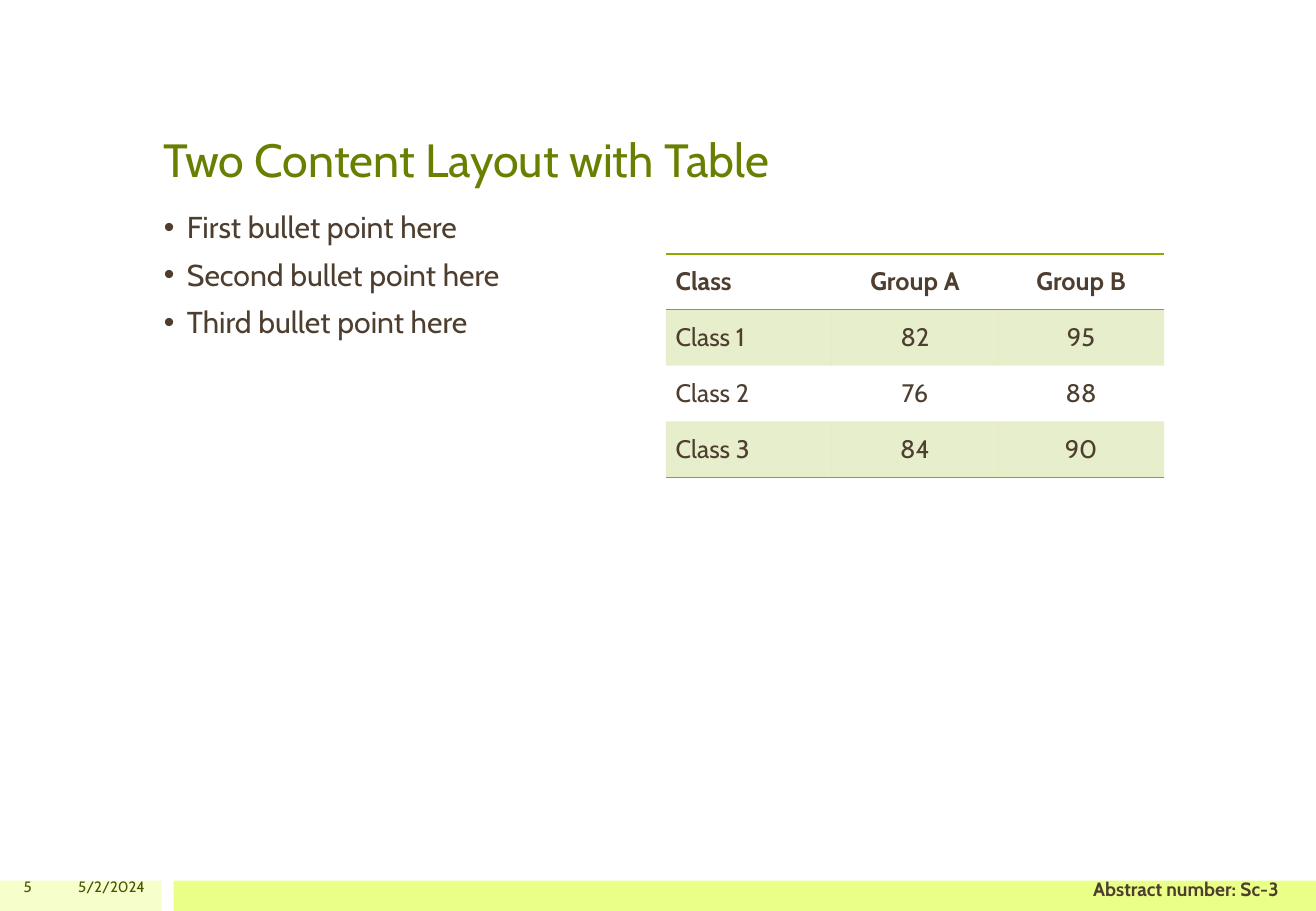
from lxml.etree import SubElement
from pptx import Presentation
from pptx.dml.color import RGBColor
from pptx.enum.shapes import MSO_SHAPE
from pptx.enum.text import MSO_ANCHOR, PP_ALIGN
from pptx.oxml.ns import qn
from pptx.util import Inches, Pt

# Content
TITLE = "Two Content Layout with Table"
BULLETS = ["First bullet point here", "Second bullet point here", "Third bullet point here"]
SCORES = [
    ("Class", "Group A", "Group B"),
    ("Class 1", "82", "95"),
    ("Class 2", "76", "88"),
    ("Class 3", "84", "90"),
]
PAGE_NUMBER = "5"
DATE = "5/2/2024"
ABSTRACT = "Abstract number: Sc-3"

# Style
FONT = "Cabin"
GREEN = RGBColor(0x68, 0x80, 0x00)
DARK_GREEN = RGBColor(0x45, 0x55, 0x00)
BROWN = RGBColor(0x4D, 0x3E, 0x2F)
RULE_GREEN = RGBColor(0x8B, 0xAA, 0x00)
PALE_LIME = RGBColor(0xF6, 0xFF, 0xCC)
LIME = RGBColor(0xE9, 0xFF, 0x88)
PLAIN_TABLE_STYLE = "{2D5ABB26-0587-4C30-8999-92F81FD0307C}"

# Layout in inches
WIDTH, HEIGHT = 10.83, 7.5
MARGIN = 1.25
COLUMN_WIDTH = 4.1
TABLE_TOP, ROW_HEIGHT = 2.09, 0.46
BAR_HEIGHT = 0.25
BARS = [(0, 1.33, PALE_LIME), (1.43, 9.4, LIME)]


def style_text(paragraph, size, color, bold=False, align=PP_ALIGN.LEFT):
    paragraph.alignment = align
    for run in paragraph.runs:
        run.font.name = FONT
        run.font.size = Pt(size)
        run.font.bold = bold
        run.font.color.rgb = color


def add_text(slide, lines, box, size, color, anchor=MSO_ANCHOR.TOP, **style):
    frame = slide.shapes.add_textbox(*map(Inches, box)).text_frame
    frame.word_wrap = True
    frame.vertical_anchor = anchor
    frame.text = "\n".join(lines)
    for paragraph in frame.paragraphs:
        style_text(paragraph, size, color, **style)
    return frame


def add_bullet(paragraph):
    paragraph.line_spacing = 0.9
    paragraph.space_before = Pt(8.9)
    properties = paragraph._p.get_or_add_pPr()
    properties.set("marL", str(Inches(0.19)))
    properties.set("indent", str(Inches(-0.19)))
    SubElement(properties, qn("a:buFont"), typeface="Arial")
    SubElement(properties, qn("a:buChar"), char="•")


def add_border(cell, side):
    line = SubElement(cell._tc.get_or_add_tcPr(), qn(f"a:{side}"), w=str(Pt(1)))
    fill = SubElement(line, qn("a:solidFill"))
    SubElement(fill, qn("a:srgbClr"), val=str(RULE_GREEN))


def shade(cell):
    cell.fill.solid()
    cell.fill.fore_color.rgb = RULE_GREEN
    color = cell._tc.tcPr.find(qn("a:solidFill")).find(qn("a:srgbClr"))
    SubElement(color, qn("a:alpha"), val="20000")


def add_scores(slide):
    left = WIDTH - MARGIN - COLUMN_WIDTH
    box = (left, TABLE_TOP, COLUMN_WIDTH, ROW_HEIGHT * len(SCORES))
    table = slide.shapes.add_table(len(SCORES), len(SCORES[0]), *map(Inches, box)).table
    table.horz_banding = False
    table._tbl.tblPr.find(qn("a:tableStyleId")).text = PLAIN_TABLE_STYLE
    for r, row in enumerate(SCORES):
        for c, value in enumerate(row):
            cell = table.cell(r, c)
            cell.text = value
            cell.vertical_anchor = MSO_ANCHOR.MIDDLE
            cell.margin_left = cell.margin_right = Inches(0.08)
            cell.margin_top = cell.margin_bottom = Inches(0.04)
            style_text(cell.text_frame.paragraphs[0], 15, BROWN, bold=r == 0,
                       align=PP_ALIGN.CENTER if c else PP_ALIGN.LEFT)
            if r == 0:
                add_border(cell, "lnT")
            if r in (0, len(SCORES) - 1):
                add_border(cell, "lnB")
            if r % 2:
                shade(cell)
            else:
                cell.fill.background()


def main():
    deck = Presentation()
    deck.slide_width, deck.slide_height = Inches(WIDTH), Inches(HEIGHT)
    slide = deck.slides.add_slide(deck.slide_layouts[6])

    # Footer bars
    for left, width, color in BARS:
        box = (left, HEIGHT - BAR_HEIGHT, width, BAR_HEIGHT)
        bar = slide.shapes.add_shape(MSO_SHAPE.RECTANGLE, *map(Inches, box))
        bar.shadow.inherit = False
        bar.fill.solid()
        bar.fill.fore_color.rgb = color
        bar.line.fill.background()

    # Title, bullets and table
    add_text(slide, [TITLE], (MARGIN, 0.3, WIDTH - 2 * MARGIN, 1.29), 27.6, GREEN,
             MSO_ANCHOR.BOTTOM)
    bullets = add_text(slide, BULLETS, (MARGIN, 1.7, COLUMN_WIDTH, 5.05), 17.9, BROWN)
    for paragraph in bullets.paragraphs:
        add_bullet(paragraph)
    add_scores(slide)

    # Footer text
    for text, left, width in [(PAGE_NUMBER, 0, 0.36), (DATE, 0.4, 0.89)]:
        footer = add_text(slide, [text], (left, 7.2, width, 0.2), 8.9, DARK_GREEN,
                          MSO_ANCHOR.MIDDLE, align=PP_ALIGN.RIGHT)
        footer.paragraphs[0].space_after = Pt(4.9)
    abstract = add_text(slide, [ABSTRACT], (8.64, 7.22, 2.24, 0.19), 11.4, BROWN,
                        bold=True, align=PP_ALIGN.CENTER)
    abstract.margin_left = abstract.margin_right = 0
    abstract.margin_top = abstract.margin_bottom = 0

    deck.save("out.pptx")


if __name__ == "__main__":
    main()
